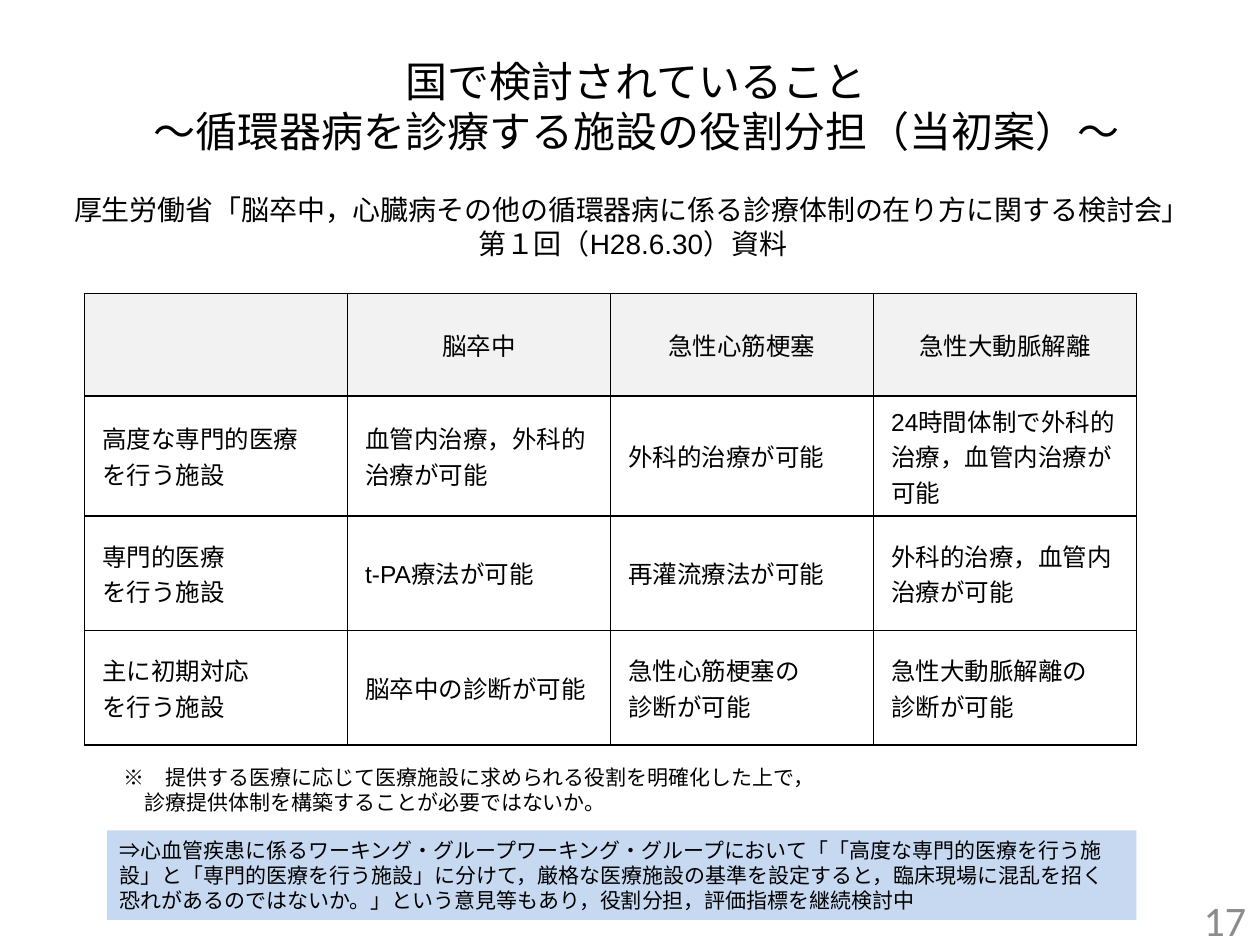
from lxml import etree
from pptx import Presentation
from pptx import util as u
from pptx.dml.color import RGBColor
from pptx.enum import shapes, text
from pptx.oxml import ns

W, H = 10, 7.5
INSETS = (0.2, 0.05, 0.1, 0.05)
LEFT, CENTER, RIGHT = text.PP_ALIGN.LEFT, text.PP_ALIGN.CENTER, text.PP_ALIGN.RIGHT
MIDDLE = text.MSO_ANCHOR.MIDDLE

HEADERS = ["", "脳卒中", "急性心筋梗塞", "急性大動脈解離"]
FACILITIES = [
    ["高度な専門的医療\nを行う施設", "血管内治療，外科的\n治療が可能",
     "外科的治療が可能", "24時間体制で外科的治療，血管内治療が\n可能"],
    ["専門的医療\nを行う施設", "t-PA療法が可能",
     "再灌流療法が可能", "外科的治療，血管内\n治療が可能"],
    ["主に初期対応\nを行う施設", "脳卒中の診断が可能",
     "急性心筋梗塞の\n診断が可能", "急性大動脈解離の\n診断が可能"],
]


def color(value):
    return RGBColor.from_string(value)


def place(s, box):
    s.left, s.top, s.width, s.height = (u.Inches(v) for v in box)


def write(tf, content, size, align=LEFT, font="Arial", ink="000000"):
    """Write one paragraph per line of content."""
    for i, line in enumerate(content.split("\n")):
        p = tf.add_paragraph() if i else tf.paragraphs[0]
        p.alignment = align
        p.space_before = u.Pt(0)
        r = p.add_run()
        r.text = line
        r.font.size = u.Pt(size)
        r.font.name = font
        r.font.color.rgb = color(ink)


def east_asian_font(tf, font):
    for p in tf.paragraphs:
        for r in p.runs:
            latin = r._r.rPr.find(ns.qn("a:latin"))
            latin.addnext(etree.Element(ns.qn("a:ea"), typeface=font))


def frame(s, insets=None):
    tf = s.text_frame
    tf.word_wrap = True
    tf.auto_size = text.MSO_AUTO_SIZE.NONE
    tf.vertical_anchor = MIDDLE
    if insets:
        (tf.margin_left, tf.margin_top,
         tf.margin_right, tf.margin_bottom) = (u.Inches(v) for v in insets)
    return tf


def title(slide, box, content):
    s = slide.shapes.title
    place(s, box)
    write(frame(s, INSETS), content, 24, CENTER)


def text_block(slide, box, content, size, insets=INSETS, **style):
    s = slide.shapes.add_textbox(*(u.Inches(v) for v in box))
    write(frame(s, insets), content, size, **style)


def border(cell):
    """Draw a 1 pt black line on all four sides of a cell."""
    tcPr = cell._tc.get_or_add_tcPr()
    for i, side in enumerate(("lnL", "lnR", "lnT", "lnB")):
        ln = etree.Element(ns.qn(f"a:{side}"), w=str(u.Pt(1)))
        fill = etree.SubElement(ln, ns.qn("a:solidFill"))
        etree.SubElement(fill, ns.qn("a:srgbClr"), val="000000")
        tcPr.insert(i, ln)


def role_table(slide, box, header_share):
    rows = [HEADERS] + FACILITIES
    x, y, w, h = (u.Inches(v) for v in box)
    table = slide.shapes.add_table(len(rows), len(HEADERS), x, y, w, h).table
    header = int(h * header_share)
    for i, row in enumerate(table.rows):
        row.height = (h - header) // len(FACILITIES) if i else header
        for j, cell in enumerate(row.cells):
            cell.vertical_anchor = MIDDLE
            cell.fill.solid()
            cell.fill.fore_color.rgb = color("FFFFFF" if i else "F2F2F2")
            border(cell)
            if rows[i][j]:
                write(cell.text_frame, rows[i][j], 14, LEFT if i else CENTER)
            if i:
                for p in cell.text_frame.paragraphs:
                    p._p.get_or_add_pPr().set("marL", str(u.Inches(0.04)))


def conclusion(slide, box, content):
    s = slide.shapes.add_shape(shapes.MSO_SHAPE.RECTANGLE,
                               *(u.Inches(v) for v in box))
    s.shadow.inherit = False
    s.fill.solid()
    s.fill.fore_color.rgb = color("C6D9F1")
    s.line.fill.background()
    tf = frame(s)
    write(tf, content, 12, font="Calibri")
    east_asian_font(tf, "Calibri")


def main():
    prs = Presentation()
    prs.slide_width, prs.slide_height = u.Inches(W), u.Inches(H)
    slide = prs.slides.add_slide(prs.slide_layouts[5])

    title(slide, (0, 0.29, W, 1.1),
          "国で検討されていること\n～循環器病を診療する施設の役割分担（当初案）～")
    text_block(slide, (-0.03, 1.36, W, 0.87),
               "厚生労働省「脳卒中，心臓病その他の循環器病に係る診療体制の在り方に関する検討会」\n"
               "第１回（H28.6.30）資料", 16, align=CENTER)
    role_table(slide, (0.67, 2.33, 8.35, 3.54), 0.23)
    text_block(slide, (0.78, 5.95, 8.39, 0.63),
               "※　提供する医療に応じて医療施設に求められる役割を明確化した上で，\n"
               "　診療提供体制を構築することが必要ではないか。", 12)
    conclusion(slide, (0.85, 6.59, 8.17, 0.71),
               "⇒心血管疾患に係るワーキング・グループワーキング・グループにおいて"
               "「「高度な専門的医療を行う施設」と「専門的医療を行う施設」に分けて，"
               "厳格な医療施設の基準を設定すると，臨床現場に混乱を招く恐れがあるのではないか。」"
               "という意見等もあり，役割分担，評価指標を継続検討中")
    text_block(slide, (7.66, 7.1, 2.33, 0.4), "17", 24, insets=None,
               align=RIGHT, font="Calibri", ink="8C8C8C")
    prs.save("out.pptx")


if __name__ == "__main__":
    main()
